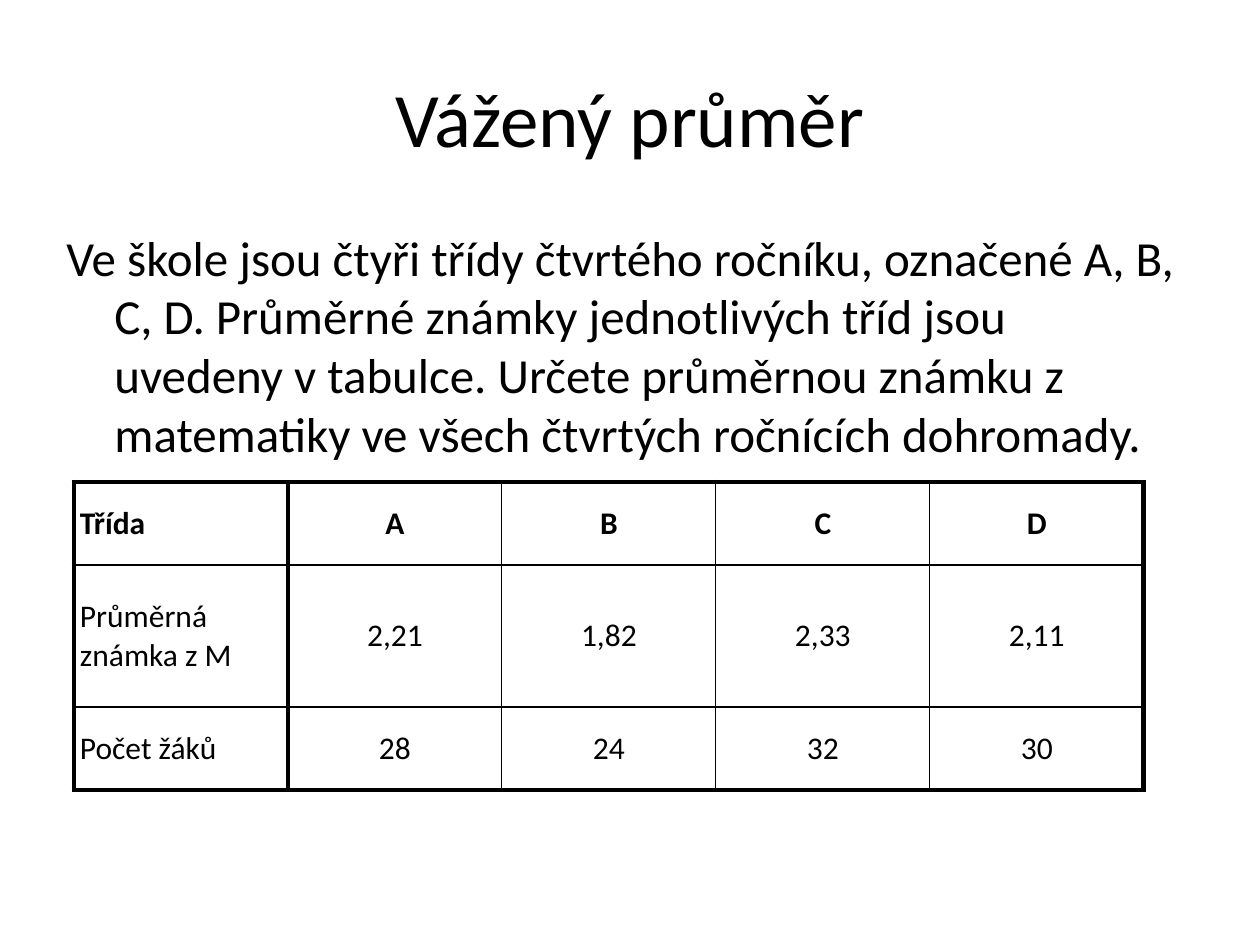
from lxml import etree
from pptx import Presentation
from pptx import util as u
from pptx.dml.color import RGBColor
from pptx.enum import text
from pptx.oxml.ns import qn

TITLE = "Vážený průměr"
TASK = ("Ve škole jsou čtyři třídy čtvrtého ročníku, označené A, B, C, D. "
        "Průměrné známky jednotlivých tříd jsou uvedeny v tabulce. "
        "Určete průměrnou známku z matematiky ve všech čtvrtých ročnících dohromady.")
CLASSES = [
    ["Třída", "A", "B", "C", "D"],
    ["Průměrná známka z M", "2,21", "1,82", "2,33", "2,11"],
    ["Počet žáků", "28", "24", "32", "30"],
]


def px(n):
    return u.Emu(round(n * 914400 / 126))


def color(value):
    return RGBColor.from_string(value)


def write(tf, words, size, font="Calibri", ink="000000", bold=False, align="LEFT", anchor="MIDDLE"):
    tf.word_wrap = True
    tf.vertical_anchor = getattr(text.MSO_ANCHOR, anchor)
    p = tf.paragraphs[0]
    p.alignment = getattr(text.PP_ALIGN, align)
    r = p.add_run()
    r.text = words
    r.font.name, r.font.size, r.font.bold = font, u.Pt(size), bold
    r.font.color.rgb = color(ink)
    return p


class Deck:
    """Holds the style and the current slide, and adds elements to it."""

    ink, thin, thick = "000000", 0.75, 3

    def __init__(self):
        self.prs = Presentation()
        self.prs.slide_width, self.prs.slide_height = px(1260), px(945)
        self.s = self.prs.slides.add_slide(self.prs.slide_layouts[5])

    def place(self, sp, x, y, w, h):
        sp.left, sp.top, sp.width, sp.height = map(px, (x, y, w, h))

    def title(self, words, *box):
        sp = self.s.shapes.title
        self.place(sp, *box)
        write(sp.text_frame, words, 44, ink=self.ink, align="CENTER")

    def body(self, words, *box, indent):
        sp = self.s.shapes.add_textbox(*map(px, box))
        p = write(sp.text_frame, words, 28, ink=self.ink, anchor="TOP")
        pPr = p._p.get_or_add_pPr()
        pPr.set("marL", str(px(indent)))
        pPr.set("indent", str(-px(indent)))

    def border(self, cell, **widths):
        tcPr = cell._tc.get_or_add_tcPr()
        for i, (side, width) in enumerate(widths.items()):
            ln = etree.Element(qn("a:ln" + side), w=str(u.Pt(width)))
            fill = etree.SubElement(ln, qn("a:solidFill"))
            etree.SubElement(fill, qn("a:srgbClr"), val=self.ink)
            tcPr.insert(i, ln)

    def table(self, rows, x, y, col_width, heights):
        n_rows, n_cols = len(rows), len(rows[0])
        frame = self.s.shapes.add_table(n_rows, n_cols, px(x), px(y),
                                        px(col_width * n_cols), px(sum(heights)))
        table = frame.table
        for col in table.columns:
            col.width = px(col_width)
        for i, row in enumerate(rows):
            table.rows[i].height = px(heights[i])
            for j, words in enumerate(row):
                cell = table.cell(i, j)
                cell.fill.background()
                cell.margin_left = cell.margin_right = px(6)
                cell.margin_top = cell.margin_bottom = px(6)
                write(cell.text_frame, words, 18, ink=self.ink, bold=i == 0,
                      align="CENTER" if j else "LEFT")
                cell.vertical_anchor = text.MSO_ANCHOR.MIDDLE
                heavy = {"L": j < 2, "R": j in (0, n_cols - 1),
                         "T": i == 0, "B": i == n_rows - 1}
                self.border(cell, **{side: self.thick if on else self.thin
                                     for side, on in heavy.items()})


def main():
    deck = Deck()
    deck.title(TITLE, 63, 38, 1134, 157)
    deck.table(CLASSES, 74, 482, 214, [83, 142, 83])
    deck.body(TASK, 54, 221, 1143, 301, indent=48)
    deck.prs.save("out.pptx")


if __name__ == "__main__":
    main()
